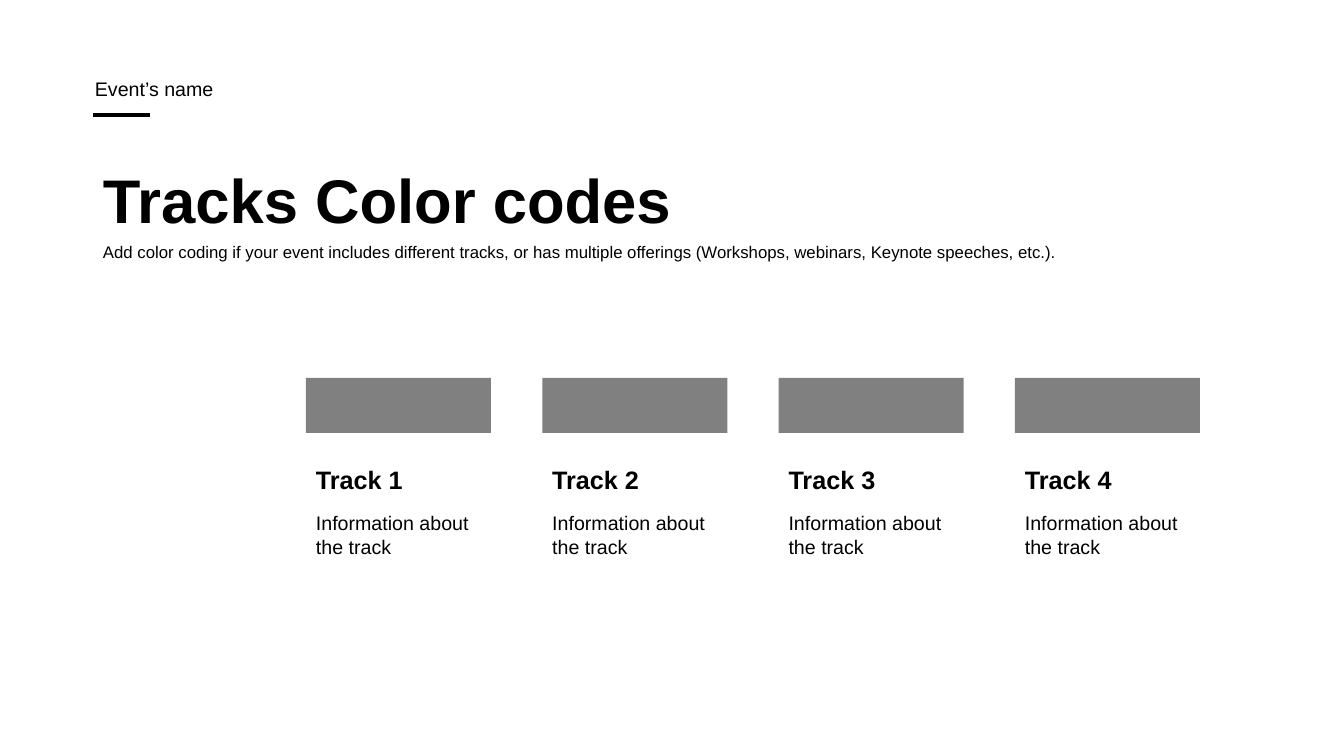
from pptx import Presentation
from pptx.dml.color import RGBColor
from pptx.enum.shapes import MSO_CONNECTOR as Connector, MSO_SHAPE as Shape
from pptx.enum.text import MSO_ANCHOR as Anchor, MSO_AUTO_SIZE as AutoSize
from pptx.oxml.ns import qn
from pptx.util import Emu, Pt
from lxml.etree import SubElement

# Content
EVENT = "Event’s name"
TITLE = "Tracks Color codes"
SUBTITLE = ("Add color coding if your event includes different tracks, or has multiple "
            "offerings (Workshops, webinars, Keynote speeches, etc.).")
TRACKS = [(f"Track {number}", "Information about the track") for number in range(1, 5)]

# Look
BLACK = RGBColor(0x00, 0x00, 0x00)
GRAY = RGBColor(0x80, 0x80, 0x80)
FONT = "Arial"
SPACED = {"line_spacing": 0.9, "space_before": Pt(10)}

# Layout in px, 100.8 to the inch
SLIDE_W, SLIDE_H = 1344, 756
MARGIN, HEAD_W = 93, 1159
TRACKS_LEFT, TRACKS_RIGHT = 306, 1200
TRACK_W = 185
BAR_TOP, BAR_H = 378, 55
NAME_TOP, NAME_H = 459, 40
INFO_TOP, INFO_H = 506, 57


def px(length):
    return Emu(round(length * 914400 / 100.8))


def add_text(slide, box, text, size, bold=False, paragraph_format=None, frame_format=None):
    frame = slide.shapes.add_textbox(*map(px, box)).text_frame
    paragraph = frame.paragraphs[0]
    run = paragraph.add_run()
    run.text = text
    run.font.color.rgb = BLACK
    formats = [
        (frame, {"word_wrap": True, **(frame_format or {})}),
        (paragraph, paragraph_format or {}),
        (run.font, {"name": FONT, "size": Pt(size), "bold": bold}),
    ]
    for target, values in formats:
        for key, value in values.items():
            setattr(target, key, value)


def add_header(slide):
    # Event name with its short rule
    rule = slide.shapes.add_connector(
        Connector.STRAIGHT, *map(px, (MARGIN, 115, MARGIN + 57, 115)))
    rule.line.color.rgb = BLACK
    rule.line.width = Pt(2.25)
    SubElement(rule._element.spPr, qn("a:effectLst"))
    add_text(slide, (85, 75, 462, 40), EVENT, 14, paragraph_format=SPACED)

    # Title and subtitle
    add_text(slide, (MARGIN, 171, HEAD_W, 65), TITLE, 44, True,
             {"line_spacing": 0.9}, {"vertical_anchor": Anchor.MIDDLE})
    add_text(slide, (MARGIN, 239, HEAD_W, 32), SUBTITLE, 12, paragraph_format=SPACED)


def add_tracks(slide):
    pitch = (TRACKS_RIGHT - TRACKS_LEFT - TRACK_W) / (len(TRACKS) - 1)
    grow = {"auto_size": AutoSize.SHAPE_TO_FIT_TEXT}
    for index, (name, info) in enumerate(TRACKS):
        left = TRACKS_LEFT + index * pitch
        bar = slide.shapes.add_shape(
            Shape.RECTANGLE, *map(px, (left, BAR_TOP, TRACK_W, BAR_H)))
        bar.shadow.inherit = False
        bar.fill.solid()
        bar.fill.fore_color.rgb = GRAY
        bar.line.fill.background()
        add_text(slide, (left, NAME_TOP, TRACK_W, NAME_H), name, 18, True, frame_format=grow)
        add_text(slide, (left, INFO_TOP, TRACK_W, INFO_H), info, 14, frame_format=grow)


def main():
    deck = Presentation()
    deck.slide_width, deck.slide_height = px(SLIDE_W), px(SLIDE_H)
    slide = deck.slides.add_slide(deck.slide_layouts[6])
    add_header(slide)
    add_tracks(slide)
    deck.save("out.pptx")


if __name__ == "__main__":
    main()
